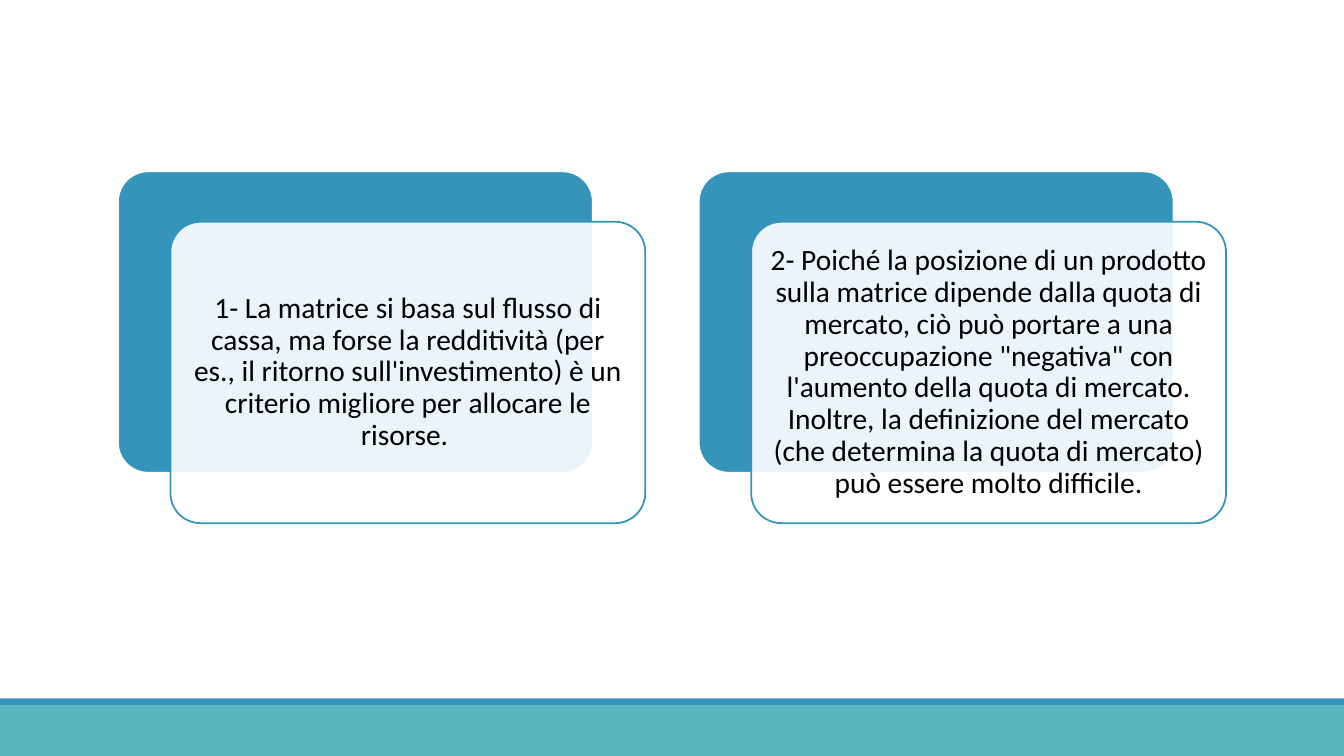
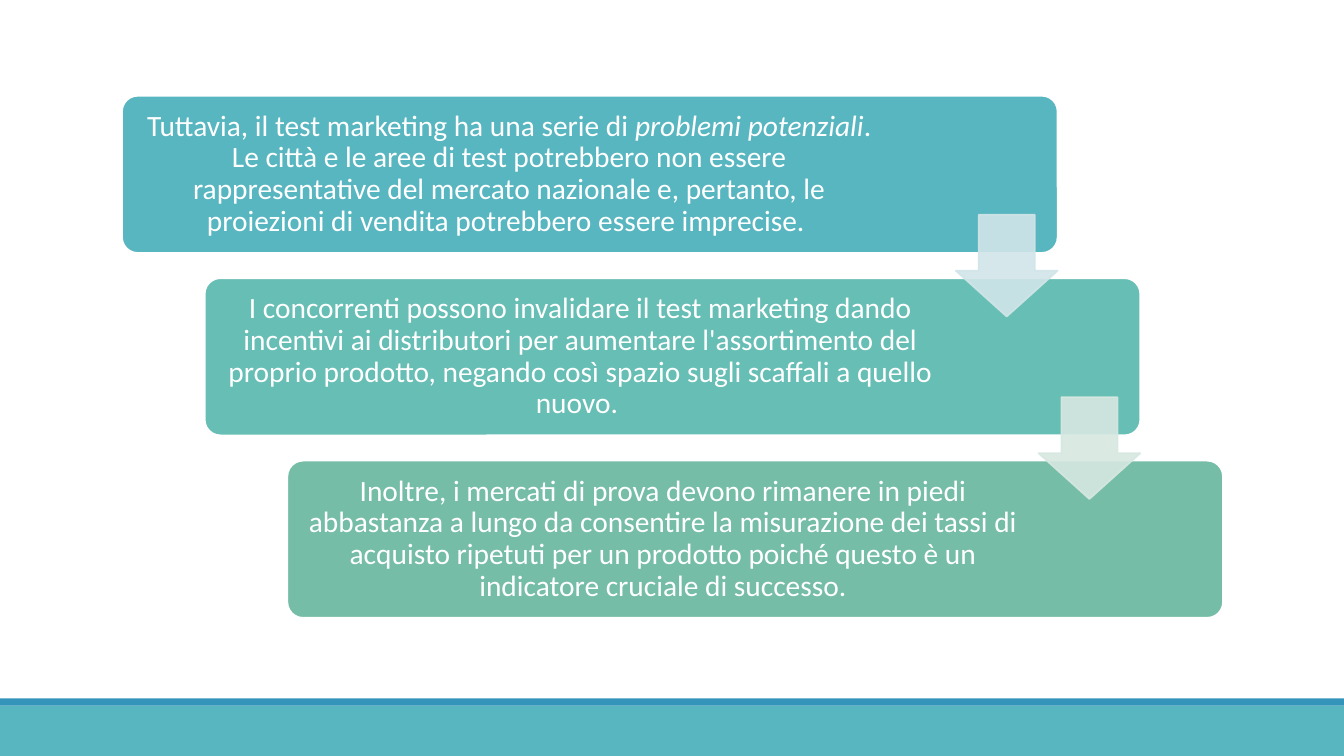
from lxml.etree import SubElement
from pptx import Presentation
from pptx.dml.color import RGBColor
from pptx.enum.shapes import MSO_SHAPE
from pptx.enum.text import MSO_ANCHOR, PP_ALIGN
from pptx.oxml.ns import qn
from pptx.util import Inches, Pt

BLUE, TEAL, WHITE, BLACK = "3494BA", "58B6C0", "FFFFFF", "000000"
FONT, TEXT_SIZE, LINE_WIDTH = "Calibri", Pt(21), Pt(1.25)
INSET = 0.09
SLIDE_WIDTH, SLIDE_HEIGHT = 13.33, 7.5

# Bottom bands: top, height, colour
BANDS = [(7, 0.5, TEAL), (6.93, 0.07, BLUE)]

CARDS = [
    "1- La matrice si basa sul flusso di cassa, ma forse la redditività (per es., il ritorno "
    "sull'investimento) è un criterio migliore per allocare le risorse. ",
    "2- Poiché la posizione di un prodotto sulla matrice dipende dalla quota di mercato, ciò può "
    "portare a una preoccupazione \"negativa\" con l'aumento della quota di mercato. Inoltre, la "
    "definizione del mercato (che determina la quota di mercato) può essere molto difficile.",
]

# Steps: colour, right inset, runs (text, italic)
STEPS = [
    (TEAL, 1.69, [
        ("Tuttavia, il test marketing ha una serie di ", False),
        ("problemi potenziali", True),
        (". Le città e le aree di test potrebbero non essere rappresentative del mercato nazionale "
         "e, pertanto, le proiezioni di vendita potrebbero essere imprecise. ", False)]),
    ("67BEB5", 1.92, [
        ("I concorrenti possono invalidare il test marketing dando incentivi ai distributori per "
         "aumentare l'assortimento del proprio prodotto, negando così spazio sugli scaffali a "
         "quello nuovo. ", False)]),
    ("75BDA7", 1.92, [
        ("Inoltre, i mercati di prova devono rimanere in piedi abbastanza a lungo da consentire la "
         "misurazione dei tassi di acquisto ripetuti per un prodotto poiché questo è un indicatore "
         "cruciale di successo.", False)]),
]
ARROW_COLOURS = ["D1E5E8", "D6E8E1"]


def rgb(colour):
    return RGBColor.from_string(colour)


def set_opacity(fill, percent):
    """Add an alpha value to a solid fill whose parent element is given."""
    colour = fill.find(qn("a:solidFill")).find(qn("a:srgbClr"))
    SubElement(colour, qn("a:alpha")).set("val", str(percent * 1000))


def add_box(slide, preset, left, top, width, height, fill, line=None, adjustments=()):
    shape = slide.shapes.add_shape(
        preset, Inches(left), Inches(top), Inches(width), Inches(height))
    shape.shadow.inherit = False
    shape.fill.solid()
    shape.fill.fore_color.rgb = rgb(fill)
    if line:
        shape.line.color.rgb = rgb(line)
        shape.line.width = LINE_WIDTH
    else:
        shape.line.fill.background()
    for index, value in enumerate(adjustments):
        shape.adjustments[index] = value
    return shape


def add_rounded(slide, left, top, width, height, fill, line):
    return add_box(slide, MSO_SHAPE.ROUNDED_RECTANGLE, left, top, width, height,
                   fill, line, [0.1])


def write_text(shape, runs, colour, right_inset=INSET):
    frame = shape.text_frame
    frame.word_wrap = True
    frame.vertical_anchor = MSO_ANCHOR.MIDDLE
    frame.margin_left = frame.margin_top = frame.margin_bottom = Inches(INSET)
    frame.margin_right = Inches(right_inset)
    paragraph = frame.paragraphs[0]
    paragraph.alignment = PP_ALIGN.CENTER
    paragraph.line_spacing = 0.9
    for text, italic in runs:
        run = paragraph.add_run()
        run.text = text
        run.font.name = FONT
        run.font.size = TEXT_SIZE
        run.font.italic = italic
        run.font.color.rgb = rgb(colour)


def add_banded_slide(presentation):
    slide = presentation.slides.add_slide(presentation.slide_layouts[6])
    for top, height, colour in BANDS:
        add_box(slide, MSO_SHAPE.RECTANGLE, 0, top, SLIDE_WIDTH, height, colour)
    return slide


def build_cards(presentation):
    slide = add_banded_slide(presentation)
    width, height, top = 4.71, 2.99, 1.7
    for index, text in enumerate(CARDS):
        left = 1.17 + index * 5.76
        add_rounded(slide, left, top, width, height, BLUE, WHITE)
        panel = add_rounded(slide, left + 0.52, top + 0.5, width, height, WHITE, BLUE)
        set_opacity(panel.fill._xPr, 90)
        write_text(panel, [(text, False)], BLACK)


def build_steps(presentation):
    slide = add_banded_slide(presentation)
    step_x, step_y = 0.82, 1.81
    for index, (colour, right_inset, runs) in enumerate(STEPS):
        step = add_rounded(slide, 1.21 + index * step_x, 0.95 + index * step_y,
                           9.28, 1.56, colour, WHITE)
        write_text(step, runs, WHITE, right_inset)
    for index, colour in enumerate(ARROW_COLOURS):
        arrow = add_box(slide, MSO_SHAPE.DOWN_ARROW, 9.48 + index * step_x,
                        2.13 + index * step_y, 1.01, 1.01, colour, colour, [0.55, 0.45])
        properties = arrow.element.spPr
        for parent in (properties, properties.find(qn("a:ln"))):
            set_opacity(parent, 90)


def main():
    presentation = Presentation()
    presentation.slide_width = Inches(SLIDE_WIDTH)
    presentation.slide_height = Inches(SLIDE_HEIGHT)
    build_cards(presentation)
    build_steps(presentation)
    presentation.save("out.pptx")


if __name__ == "__main__":
    main()
